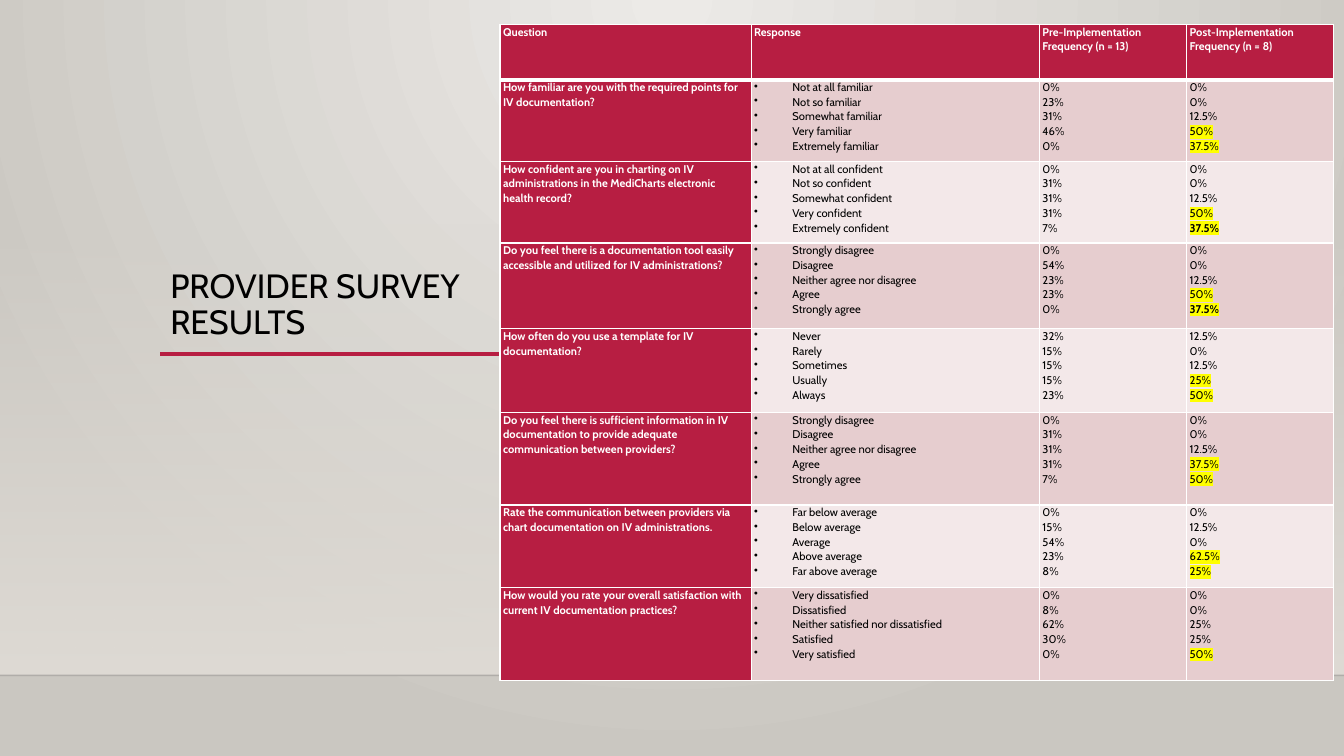
from pptx import Presentation
from pptx.dml.color import RGBColor
from pptx.enum.shapes import MSO_CONNECTOR, MSO_SHAPE
from pptx.enum.text import MSO_ANCHOR
from pptx.oxml import parse_xml
from pptx.oxml.ns import nsdecls, qn
from pptx.util import Inches, Pt
from lxml.etree import SubElement

COLORS = {
    "glow": "ECEAE7",
    "stone": "CAC7C1",
    "wall": "DFDBD5",
    "floor_line": "000001",
    "crimson": "B71E42",
    "rose": "E6CDCF",
    "blush": "F3E8E9",
    "white": "FFFFFF",
    "black": "000000",
    "yellow": "FFFF00",
}
FONT = "Cabin"
SLIDE_WIDTH, SLIDE_HEIGHT = 13.33, 7.5
FLOOR_TOP = 6.7

HEADINGS = ["Question", "Response", "Pre-Implementation Frequency (n = 13)",
            "Post-Implementation Frequency (n = 8)"]
COLUMN_WIDTHS = [2.49, 2.86, 1.46, 1.46]
HEADING_HEIGHT = 0.55
AGREEMENT = ["Strongly disagree", "Disagree", "Neither agree nor disagree", "Agree",
             "Strongly agree"]
SURVEY = [
    dict(question="How familiar are you with the required points for IV documentation?",
         responses=["Not at all familiar", "Not so familiar", "Somewhat familiar",
                    "Very familiar", "Extremely familiar"],
         pre="0 23 31 46 0", post="0 0 12.5 50 37.5", height=0.81),
    dict(question="How confident are you in charting on IV administrations in the "
                  "MediCharts electronic health record?",
         responses=["Not at all confident", "Not so confident", "Somewhat confident",
                    "Very confident", "Extremely confident"],
         pre="0 31 31 31 7", post="0 0 12.5 50 37.5", height=0.81, bold_last=True),
    dict(question="Do you feel there is a documentation tool easily accessible and "
                  "utilized for IV administrations?",
         responses=AGREEMENT,
         pre="0 54 23 23 0", post="0 0 12.5 50 37.5", height=0.85, bold_last=True),
    dict(question="How often do you use a template for IV documentation?",
         responses=["Never", "Rarely", "Sometimes", "Usually", "Always"],
         pre="32 15 15 15 23", post="12.5 0 12.5 25 50", height=0.83),
    dict(question="Do you feel there is sufficient information in IV documentation to "
                  "provide adequate communication between providers?",
         responses=AGREEMENT,
         pre="0 31 31 31 7", post="0 0 12.5 37.5 50", height=0.92),
    dict(question="Rate the communication between providers via chart documentation on "
                  "IV administrations.",
         responses=["Far below average", "Below average", "Average", "Above average",
                    "Far above average"],
         pre="0 15 54 23 8", post="0 12.5 0 62.5 25", height=0.82),
    dict(question="How would you rate your overall satisfaction with current IV "
                  "documentation practices?",
         responses=["Very dissatisfied", "Dissatisfied", "Neither satisfied nor dissatisfied",
                    "Satisfied", "Very satisfied"],
         pre="0 8 62 30 0", post="0 0 25 25 50", height=0.92, highlighted=1),
]


def rgb(name):
    return RGBColor.from_string(COLORS[name])


def write(paragraph, text, size=8, color="black", bold=False, spacing=1.07,
          highlight=None, bullet=False):
    paragraph.line_spacing = spacing
    if bullet:
        properties = paragraph._p.get_or_add_pPr()
        properties.set("marL", str(Inches(0.38)))
        properties.set("indent", str(-Inches(0.38)))
        SubElement(properties, qn("a:buChar"), char="•")
    run = paragraph.add_run()
    run.text = text
    run.font.size = Pt(size)
    run.font.bold = bold
    run.font.color.rgb = rgb(color)
    if highlight:
        marker = SubElement(run._r.get_or_add_rPr(), qn("a:highlight"))
        SubElement(marker, qn("a:srgbClr"), val=COLORS[highlight])
    run.font.name = FONT


def apply_gradient(owner, fill, start, end, direction, start_alpha=100):
    fill.gradient()
    default = next(owner.iter(qn("a:gradFill")))
    default.getparent().replace(default, parse_xml(
        f'<a:gradFill {nsdecls("a")} rotWithShape="1"><a:gsLst>'
        f'<a:gs pos="0"><a:srgbClr val="{COLORS[start]}">'
        f'<a:alpha val="{start_alpha * 1000}"/></a:srgbClr></a:gs>'
        f'<a:gs pos="100000"><a:srgbClr val="{COLORS[end]}"/></a:gs>'
        f'</a:gsLst>{direction}</a:gradFill>'))


def add_rule(slide, left, right, top, color, weight, alpha=100):
    rule = slide.shapes.add_connector(MSO_CONNECTOR.STRAIGHT, Inches(left), Inches(top),
                                      Inches(right), Inches(top))
    rule.line.color.rgb = rgb(color)
    rule.line.width = Pt(weight)
    tint = next(rule.line._ln.iter(qn("a:srgbClr")))
    SubElement(tint, qn("a:alpha"), val=str(alpha * 1000))
    SubElement(rule._element.spPr, qn("a:effectLst"))


def add_backdrop(slide, left, top, width, height):
    apply_gradient(slide.element, slide.background.fill, "glow", "stone",
                   '<a:path path="circle"><a:fillToRect l="43000" t="0" r="43000" '
                   'b="100000"/></a:path>')
    wall = slide.shapes.add_shape(MSO_SHAPE.RECTANGLE, Inches(left), Inches(top),
                                  Inches(width), Inches(height))
    wall.shadow.inherit = False
    wall.line.fill.background()
    apply_gradient(wall._element, wall.fill, "wall", "wall",
                   '<a:lin ang="5400000" scaled="0"/>', start_alpha=0)
    add_rule(slide, left, left + width, top + height, "floor_line", 1, alpha=20)


def add_title(slide, left, top, width, height):
    title = slide.shapes.add_textbox(Inches(left), Inches(top), Inches(width), Inches(height))
    title.text_frame.word_wrap = True
    title.text_frame.vertical_anchor = MSO_ANCHOR.BOTTOM
    write(title.text_frame.paragraphs[0], "PROVIDER SURVEY RESULTS", size=24, spacing=0.9)
    add_rule(slide, left, left + 3.57, top + height + 0.07, "crimson", 2.5)


def fill_cell(cell, lines, fill, top_border=1, bottom_border=1):
    cell.margin_left = cell.margin_right = Inches(0.03)
    cell.margin_top = cell.margin_bottom = 0
    properties = cell._tc.get_or_add_tcPr()
    borders = {"lnL": 1, "lnR": 1, "lnT": top_border, "lnB": bottom_border}
    for edge, weight in borders.items():
        border = SubElement(properties, qn(f"a:{edge}"), w=str(Pt(weight)))
        paint = SubElement(border, qn("a:solidFill"))
        SubElement(paint, qn("a:srgbClr"), val=COLORS["white"])
    cell.fill.solid()
    cell.fill.fore_color.rgb = rgb(fill)
    frame = cell.text_frame
    for index, (text, style) in enumerate(lines):
        paragraph = frame.add_paragraph() if index else frame.paragraphs[0]
        write(paragraph, text, **style)


def post_lines(entry):
    values = entry["post"].split()
    last = len(values) - 1
    first_marked = len(values) - entry.get("highlighted", 2)
    return [(f"{value}%", dict(highlight="yellow" if index >= first_marked else None,
                               bold=index == last and entry.get("bold_last", False)))
            for index, value in enumerate(values)]


def add_survey_table(slide, left, top):
    heights = [HEADING_HEIGHT] + [entry["height"] for entry in SURVEY]
    survey = slide.shapes.add_table(len(heights), len(COLUMN_WIDTHS), Inches(left), Inches(top),
                                    Inches(sum(COLUMN_WIDTHS)), Inches(sum(heights))).table
    survey.first_row = survey.horz_banding = False
    for column, width in zip(survey.columns, COLUMN_WIDTHS):
        column.width = Inches(width)
    for row, height in zip(survey.rows, heights):
        row.height = Inches(height)

    label = dict(color="white", bold=True)
    for column, heading in enumerate(HEADINGS):
        fill_cell(survey.cell(0, column), [(heading, label)], "crimson", bottom_border=3)
    for row, entry in enumerate(SURVEY, start=1):
        band = "rose" if row % 2 else "blush"
        contents = [
            ([(entry["question"], label)], "crimson"),
            ([(response, dict(bullet=True)) for response in entry["responses"]], band),
            ([(f"{value}%", {}) for value in entry["pre"].split()], band),
            (post_lines(entry), band),
        ]
        for column, (lines, fill) in enumerate(contents):
            fill_cell(survey.cell(row, column), lines, fill, top_border=3 if row == 1 else 1)


def main():
    deck = Presentation()
    deck.slide_width, deck.slide_height = Inches(SLIDE_WIDTH), Inches(SLIDE_HEIGHT)
    slide = deck.slides.add_slide(deck.slide_layouts[6])
    add_backdrop(slide, 0, 2.21, SLIDE_WIDTH, FLOOR_TOP - 2.21)
    add_title(slide, 1.59, 1.85, 3.11, 1.59)
    add_survey_table(slide, 4.96, 0.24)
    deck.save("out.pptx")


if __name__ == "__main__":
    main()
